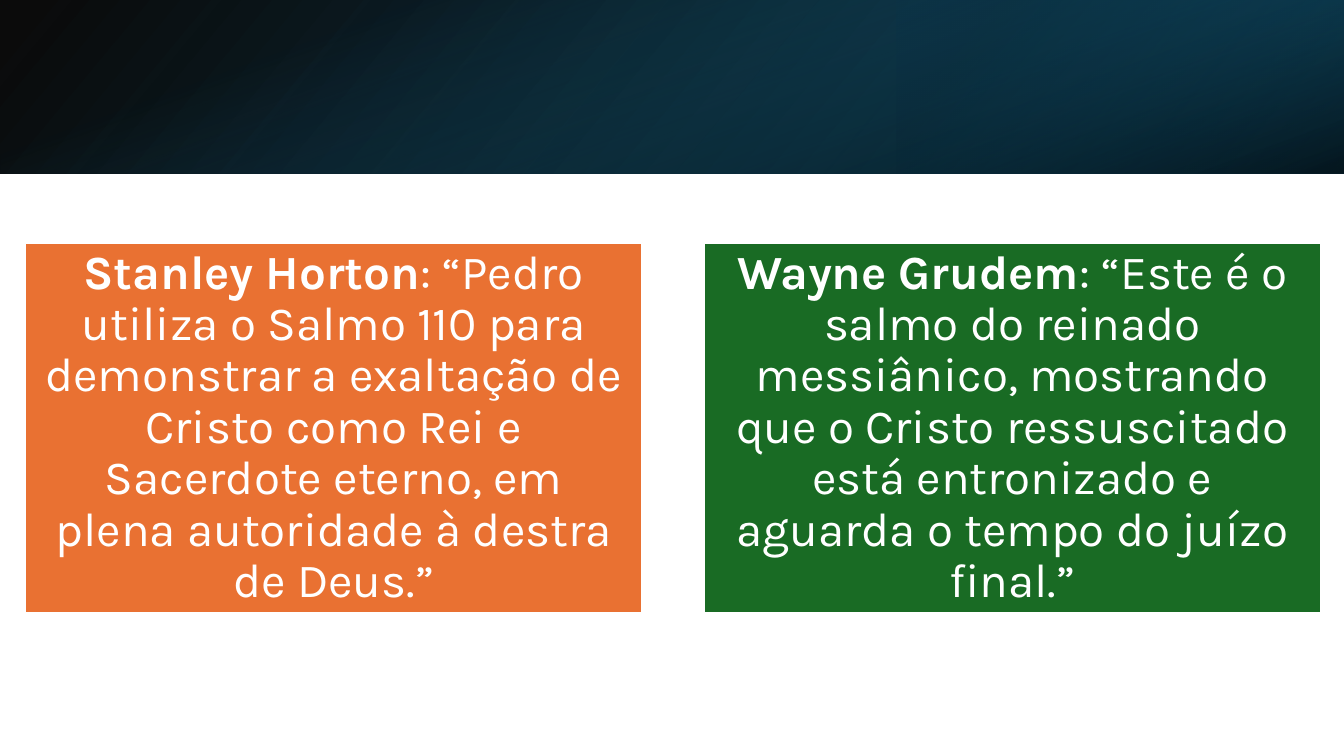
import lxml.etree
import pptx
import pptx.dml.color
import pptx.enum.shapes
import pptx.enum.text
import pptx.oxml.ns
import pptx.util

Inches = pptx.util.Inches

COLORS = {
    "white": "FFFFFF",
    "orange": "E97132",
    "green": "196B24",
    "black": "000000",
    "navy": "104862",
    "deep teal": "0B3041",
    "teal": "156082",
}

SLIDE_WIDTH, SLIDE_HEIGHT = 13.33, 7.5
BAND_HEIGHT = 1.72
CORNER_WIDTH = 4.44
SIDEWAYS_OFFSET = (SLIDE_WIDTH - BAND_HEIGHT) / 2

# Gradient stops are (position %, colour, opacity %).
BAND_LAYERS = [
    {"box": (0, 0, SLIDE_WIDTH, BAND_HEIGHT), "rotation": 0, "flip": True,
     "angle": 140, "stops": [(0, "black", 96), (100, "navy", 100)]},
    {"box": (SLIDE_WIDTH - CORNER_WIDTH, 0, CORNER_WIDTH, BAND_HEIGHT),
     "rotation": 180, "flip": True,
     "angle": 320, "stops": [(19, "deep teal", 68), (100, "teal", 79)]},
    {"box": (SIDEWAYS_OFFSET, -SIDEWAYS_OFFSET, BAND_HEIGHT, SLIDE_WIDTH),
     "rotation": 90, "flip": False,
     "angle": 340, "stops": [(23, "teal", 0), (99, "black", 74)]},
]
BAND_LAYERS[0]["stops"][1] = (100, "navy", 100)

QUOTES = [
    ("Stanley Horton",
     ": “Pedro utiliza o Salmo 110 para demonstrar a exaltação de Cristo como "
     "Rei e Sacerdote eterno, em plena autoridade à destra de Deus.”", "orange"),
    ("Wayne Grudem",
     ": “Este é o salmo do reinado messiânico, mostrando que o Cristo "
     "ressuscitado está entronizado e aguarda o tempo do juízo final.”", "green"),
]
CARD_LEFT, CARD_TOP = 0.25, 2.41
CARD_WIDTH, CARD_HEIGHT = 6.12, 3.67
CARD_STEP = 6.73

FRAME_FORMAT = {
    "word_wrap": True,
    "vertical_anchor": pptx.enum.text.MSO_ANCHOR.MIDDLE,
    "margin_left": Inches(0.14),
    "margin_right": Inches(0.14),
    "margin_top": Inches(0.14),
    "margin_bottom": Inches(0.14),
}
PARAGRAPH_FORMAT = {
    "alignment": pptx.enum.text.PP_ALIGN.CENTER,
    "line_spacing": 0.9,
}
FONT_FORMAT = {"name": "Karla", "size": pptx.util.Pt(34)}


def rgb(color):
    return pptx.dml.color.RGBColor.from_string(COLORS[color])


def set_attributes(target, values):
    for name, value in values.items():
        setattr(target, name, value)


def add_rectangle(slide, box):
    shape = slide.shapes.add_shape(
        pptx.enum.shapes.MSO_SHAPE.RECTANGLE, *map(Inches, box))
    shape.shadow.inherit = False
    return shape


def fill_gradient(shape, stops, angle):
    """Fill with a linear gradient whose stops carry their own opacity."""
    qn = pptx.oxml.ns.qn
    gradient = lxml.etree.Element(qn("a:gradFill"), rotWithShape="1")
    stop_list = lxml.etree.SubElement(gradient, qn("a:gsLst"))
    for position, color, opacity in stops:
        stop = lxml.etree.SubElement(stop_list, qn("a:gs"), pos=str(position * 1000))
        value = lxml.etree.SubElement(stop, qn("a:srgbClr"), val=COLORS[color])
        lxml.etree.SubElement(value, qn("a:alpha"), val=str(opacity * 1000))
    lxml.etree.SubElement(gradient, qn("a:lin"), ang=str(angle * 60000), scaled="0")
    shape._element.spPr.find(qn("a:prstGeom")).addnext(gradient)


def add_band_layer(slide, layer):
    shape = add_rectangle(slide, layer["box"])
    shape.line.fill.background()
    shape.rotation = layer["rotation"]
    if layer["flip"]:
        shape._element.spPr.find(pptx.oxml.ns.qn("a:xfrm")).set("flipH", "1")
    fill_gradient(shape, layer["stops"], layer["angle"])


def add_quote_card(slide, left, author, quote, color):
    card = add_rectangle(slide, (left, CARD_TOP, CARD_WIDTH, CARD_HEIGHT))
    card.fill.solid()
    card.fill.fore_color.rgb = rgb(color)
    card.line.color.rgb = rgb("white")
    card.line.width = pptx.util.Pt(1.5)
    set_attributes(card.text_frame, FRAME_FORMAT)
    paragraph = card.text_frame.paragraphs[0]
    set_attributes(paragraph, PARAGRAPH_FORMAT)
    for text, bold in ((author, True), (quote, False)):
        run = paragraph.add_run()
        run.text = text
        set_attributes(run.font, {**FONT_FORMAT, "bold": bold})
        run.font.color.rgb = rgb("white")


def main():
    presentation = pptx.Presentation()
    presentation.slide_width = Inches(SLIDE_WIDTH)
    presentation.slide_height = Inches(SLIDE_HEIGHT)
    slide = presentation.slides.add_slide(presentation.slide_layouts[6])
    for layer in BAND_LAYERS:
        add_band_layer(slide, layer)
    for index, (author, quote, color) in enumerate(QUOTES):
        add_quote_card(slide, CARD_LEFT + index * CARD_STEP, author, quote, color)
    presentation.save("out.pptx")


if __name__ == "__main__":
    main()
